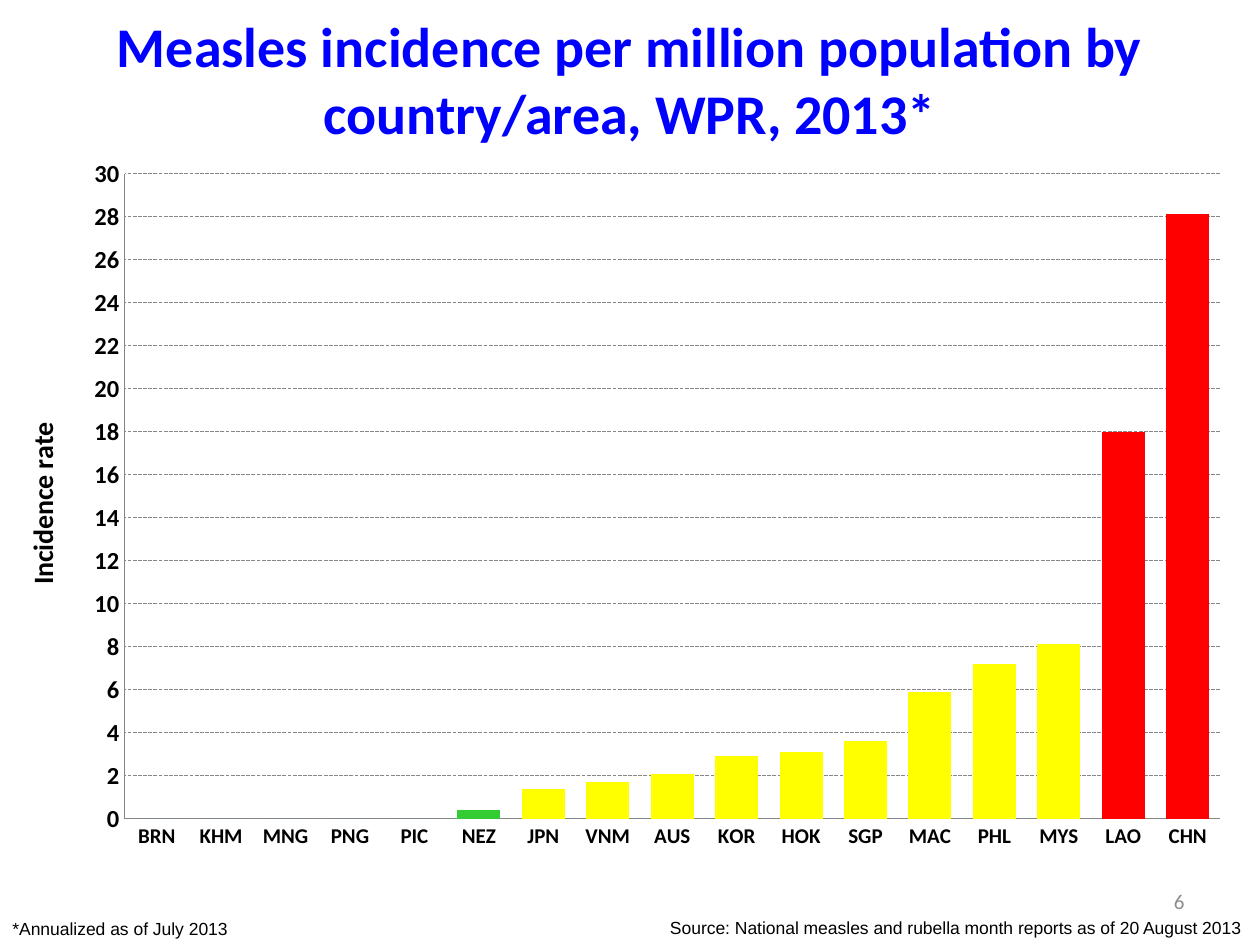
import pptx
import pptx.util
import pptx.chart.data
import pptx.dml.color
import pptx.enum.chart
import pptx.enum.dml
import pptx.enum.text
import pptx.oxml

Pt = pptx.util.Pt
ALIGN = pptx.enum.text.PP_ALIGN
ANCHOR = pptx.enum.text.MSO_ANCHOR
COLORS = {"title": "0000FF", "text": "000000", "number": "8C8C8C", "axis": "868686",
          "low": "33CC33", "medium": "FFFF00", "high": "FF0000"}

INCIDENCE = {"BRN": 0, "KHM": 0, "MNG": 0, "PNG": 0, "PIC": 0, "NEZ": 0.4,
             "JPN": 1.4, "VNM": 1.7, "AUS": 2.1, "KOR": 2.9, "HOK": 3.1,
             "SGP": 3.6, "MAC": 5.9, "PHL": 7.2, "MYS": 8.1, "LAO": 18, "CHN": 28.1}


def level(rate):
    """Colour name for an incidence rate."""
    return "low" if rate < 1 else "medium" if rate < 10 else "high"


class Deck:
    def __init__(self, width, height):
        self.prs = pptx.Presentation()
        self.prs.slide_width, self.prs.slide_height = Pt(width), Pt(height)
        self.s = self.prs.slides.add_slide(self.prs.slide_layouts[6])

    def color(self, name):
        return pptx.dml.color.RGBColor.from_string(COLORS[name])

    def font(self, font, color="text", **values):
        for key, value in values.items():
            setattr(font, key, value)
        font.color.rgb = self.color(color)

    def line(self, line, color, width):
        line.color.rgb = self.color(color)
        line.width = Pt(width)

    def text(self, text, box, align=ALIGN.LEFT, anchor=ANCHOR.TOP, wrap=True, **font):
        sp = self.s.shapes.add_textbox(*map(Pt, box))
        tf = sp.text_frame
        for key, value in {"word_wrap": wrap, "vertical_anchor": anchor}.items():
            setattr(tf, key, value)
        p = tf.paragraphs[0]
        p.alignment = align
        r = p.add_run()
        r.text = text
        self.font(r.font, **font)

    def columns(self, data, box, axis_title, layout):
        cd = pptx.chart.data.CategoryChartData()
        cd.categories = list(data)
        cd.add_series("Incidence rate", list(data.values()))
        kind = pptx.enum.chart.XL_CHART_TYPE.COLUMN_CLUSTERED
        chart = self.s.shapes.add_chart(kind, *map(Pt, box), cd).chart
        chart.has_legend = chart.has_title = False
        self.font(chart.font, name="Calibri", size=Pt(12), bold=True)

        # Columns coloured by level
        plot = chart.plots[0]
        plot.gap_width, plot.vary_by_categories = 50, False
        for i, rate in enumerate(data.values()):
            if rate:
                fill = plot.series[0].points[i].format.fill
                fill.solid()
                fill.fore_color.rgb = self.color(level(rate))

        # Axes and dashed gridlines
        for axis in (chart.category_axis, chart.value_axis):
            axis.major_tick_mark = axis.minor_tick_mark = pptx.enum.chart.XL_TICK_MARK.NONE
            self.line(axis.format.line, "axis", 0.75)
        values = {"minimum_scale": 0, "maximum_scale": 30, "major_unit": 2,
                  "has_major_gridlines": True}
        for key, value in values.items():
            setattr(axis, key, value)
        self.font(axis.tick_labels.font, name="Calibri", size=Pt(14), bold=True)
        axis.tick_labels.number_format = "0"
        axis.tick_labels.number_format_is_linked = False
        grid = axis.major_gridlines.format.line
        self.line(grid, "axis", 0.75)
        grid.dash_style = pptx.enum.dml.MSO_LINE.SQUARE_DOT
        tf = axis.axis_title.text_frame
        tf.text = axis_title
        self.font(tf.paragraphs[0].runs[0].font, name="Calibri", size=Pt(16), bold=True)

        # Fixed inner plot area
        ns = "http://schemas.openxmlformats.org/drawingml/2006/chart"
        modes = '<c:layoutTarget val="inner"/><c:xMode val="edge"/><c:yMode val="edge"/>'
        places = "".join(f'<c:{k} val="{v}"/>' for k, v in layout.items())
        area = chart._chartSpace.chart.plotArea
        for old in area.findall(f"{{{ns}}}layout"):
            area.remove(old)
        area.insert(0, pptx.oxml.parse_xml(
            f'<c:layout xmlns:c="{ns}"><c:manualLayout>{modes}{places}'
            '</c:manualLayout></c:layout>'))


def main():
    deck = Deck(720, 540)

    # Title
    deck.text("Measles incidence per million population by country/area, WPR, 2013*",
              (0, 0, 720, 90), ALIGN.CENTER, ANCHOR.MIDDLE,
              name="Calibri", size=Pt(32), bold=True, color="title")

    # Slide number
    deck.text("6", (516, 500.4, 168, 28.8), ALIGN.RIGHT, ANCHOR.MIDDLE,
              name="Calibri", size=Pt(12), color="number")

    # Chart
    deck.columns(INCIDENCE, (0, 82.8, 711.4, 409.7), "Incidence rate",
                 {"x": 0.1, "y": 0.04, "w": 0.88, "h": 0.9})

    # Source and footnote
    note = {"wrap": False, "name": "Arial", "size": Pt(10)}
    deck.text("Source: National measles and rubella month reports as of 20 August 2013",
              (375.8, 520.6, 343.4, 19.4), **note)
    deck.text("*Annualized as of July 2013", (0, 521.3, 141.1, 19.4), **note)

    deck.prs.save("out.pptx")


if __name__ == "__main__":
    main()
